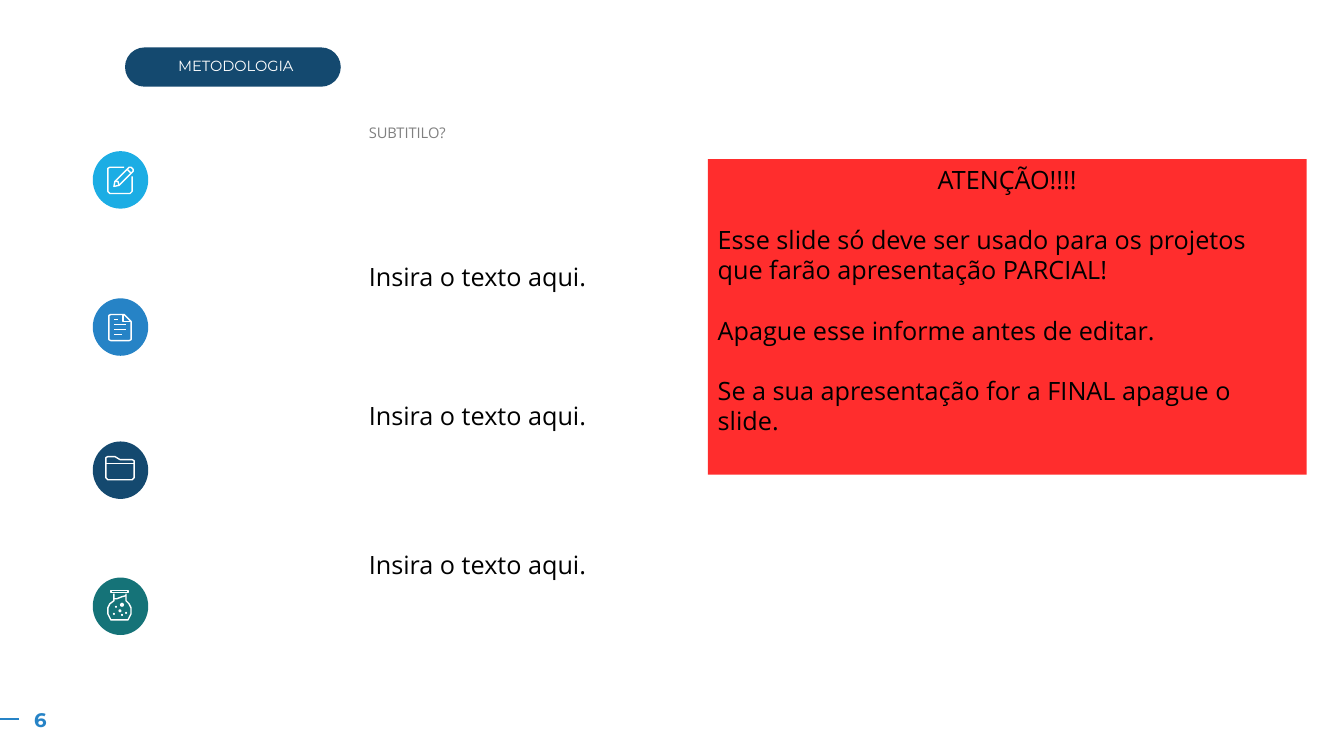
from pptx import Presentation
from pptx.dml.color import RGBColor
from pptx.enum.shapes import MSO_CONNECTOR, MSO_SHAPE
from pptx.enum.text import MSO_ANCHOR, PP_ALIGN
from pptx.util import Inches, Pt
from lxml import etree


def paint(target, color):
    target.solid()
    target.fore_color.rgb = RGBColor.from_string(color)


def write(paragraph, text, size, font, color, align=PP_ALIGN.LEFT, bold=False):
    paragraph.alignment = align
    run = paragraph.add_run()
    run.text = text
    run.font.size = Pt(size)
    run.font.name = font
    run.font.bold = bold
    paint(run.font.fill, color)


NAVY = "14496F"
BLUE = "2683C6"
WHITE = "FFFFFF"
BLACK = "000000"

presentation = Presentation()
presentation.slide_width = Inches(13.33)
presentation.slide_height = Inches(7.5)
slide = presentation.slides.add_slide(presentation.slide_layouts[5])
shapes = slide.shapes

heading_pill = shapes.add_shape(
    MSO_SHAPE.ROUNDED_RECTANGLE, Inches(1.24), Inches(0.47), Inches(2.14), Inches(0.39))
heading_pill.adjustments[0] = 0.5
heading_pill.shadow.inherit = False
paint(heading_pill.fill, NAVY)
heading_pill.line.fill.background()

heading = shapes.title
heading.left, heading.top = Inches(1.41), Inches(0.51)
heading.width, heading.height = Inches(1.86), Inches(0.29)
heading.text_frame.vertical_anchor = MSO_ANCHOR.TOP
write(heading.text_frame.paragraphs[0], "METODOLOGIA", 10.5, "Montserrat", WHITE, PP_ALIGN.CENTER)
heading.element.addprevious(heading_pill.element)

subtitle = shapes.add_textbox(Inches(3.56), Inches(1.09), Inches(7.7), Inches(0.34)).text_frame
subtitle.word_wrap = True
subtitle.paragraphs[0].line_spacing = 1.5
write(subtitle.paragraphs[0], "SUBTITILO?", 10.5, "Open Sans", "808080")

pencil_note = [
    [(1.23, 1.66), (1.09, 1.66), (1.07, 1.67), (1.07, 1.9), (1.09, 1.92),
     (1.29, 1.92), (1.31, 1.9), (1.31, 1.75)],
    [(1.13, 1.85), (1.14, 1.8), (1.28, 1.66), (1.3, 1.66), (1.32, 1.68),
     (1.32, 1.7), (1.18, 1.84), (1.13, 1.85)],
    [(1.26, 1.68), (1.3, 1.72)],
    [(1.14, 1.8), (1.17, 1.8), (1.18, 1.84)],
]
document = [
    [(1.23, 3.12), (1.1, 3.12), (1.08, 3.13), (1.08, 3.37), (1.1, 3.38),
     (1.28, 3.38), (1.3, 3.37), (1.3, 3.19), (1.23, 3.12)],
    [(1.22, 3.12), (1.22, 3.19), (1.3, 3.19)],
    [(1.13, 3.17), (1.17, 3.17)],
    [(1.13, 3.22), (1.25, 3.22)],
    [(1.13, 3.27), (1.25, 3.27)],
    [(1.13, 3.32), (1.21, 3.32)],
]
folder = [
    [(1.07, 4.53), (1.14, 4.53), (1.19, 4.56), (1.31, 4.56), (1.33, 4.57), (1.33, 4.74),
     (1.31, 4.76), (1.07, 4.76), (1.05, 4.74), (1.05, 4.54), (1.07, 4.53)],
    [(1.05, 4.6), (1.33, 4.6)],
]
flask = [
    [(1.1, 5.86), (1.27, 5.86), (1.27, 5.88), (1.1, 5.88), (1.1, 5.86)],
    [(1.13, 5.89), (1.13, 5.96), (1.09, 5.99), (1.07, 6.03), (1.07, 6.09), (1.1, 6.15),
     (1.27, 6.15), (1.3, 6.09), (1.3, 6.03), (1.28, 5.99), (1.25, 5.96), (1.25, 5.89)],
    [(1.13, 5.94), (1.16, 5.94), (1.21, 5.92), (1.25, 5.91)],
]
steps = [
    (1.5, "1CADE4", pencil_note),
    (2.96, BLUE, document),
    (4.38, NAVY, folder),
    (5.73, "157378", flask),
]
for top, color, strokes in steps:
    disc = shapes.add_shape(MSO_SHAPE.OVAL, Inches(0.92), Inches(top), Inches(0.55), Inches(0.57))
    disc.shadow.inherit = False
    paint(disc.fill, color)
    disc.line.fill.background()

    outlines = [[(Inches(x), Inches(y)) for x, y in stroke] for stroke in strokes]
    builder = shapes.build_freeform(*outlines[0][0])
    builder.add_line_segments(outlines[0][1:], close=False)
    for outline in outlines[1:]:
        builder.move_to(*outline[0])
        builder.add_line_segments(outline[1:], close=False)
    icon = builder.convert_to_shape()
    icon.shadow.inherit = False
    icon.fill.background()
    paint(icon.line.fill, WHITE)
    icon.line.width = Pt(1)

bubbles = [(1.21, 6, 0.04), (1.19, 6.06, 0.03), (1.13, 6.09, 0.02),
           (1.15, 6.02, 0.02), (1.25, 6.08, 0.02), (1.21, 6.1, 0.02)]
for center_x, center_y, size in bubbles:
    bubble = shapes.add_shape(
        MSO_SHAPE.OVAL, Inches(center_x - size / 2), Inches(center_y - size / 2),
        Inches(size), Inches(size))
    bubble.shadow.inherit = False
    paint(bubble.fill, WHITE)
    bubble.line.fill.background()

for top in (2.54, 3.92, 5.4):
    step_text = shapes.add_textbox(Inches(3.56), Inches(top), Inches(7.7), Inches(1.13)).text_frame
    step_text.word_wrap = True
    write(step_text.paragraphs[0], "Insira o texto aqui.", 18, "Open Sans", BLACK)

warning = shapes.add_shape(
    MSO_SHAPE.RECTANGLE, Inches(7.02), Inches(1.58), Inches(5.94), Inches(3.13))
warning.shadow.inherit = False
paint(warning.fill, "FF2D2D")
warning.line.fill.background()
warning_text = warning.text_frame
warning_text.word_wrap = True
warning_text.vertical_anchor = MSO_ANCHOR.TOP
write(warning_text.paragraphs[0], "ATENÇÃO!!!!", 18, "Open Sans", BLACK, PP_ALIGN.CENTER)
for notice in (
    "Esse slide só deve ser usado para os projetos que farão apresentação PARCIAL!",
    "Apague esse informe antes de editar.",
    "Se a sua apresentação for a FINAL apague o slide.",
):
    paragraph = warning_text.add_paragraph()
    paragraph.space_before = Pt(21.5)
    write(paragraph, notice, 18, "Open Sans", BLACK)

page_number = shapes.add_textbox(Inches(0.12), Inches(6.97), Inches(0.56), Inches(0.34)).text_frame
page_number.word_wrap = True
page_number.vertical_anchor = MSO_ANCHOR.MIDDLE
write(page_number.paragraphs[0], "6", 14, "Montserrat", BLUE, PP_ALIGN.CENTER, bold=True)

page_dash = shapes.add_connector(
    MSO_CONNECTOR.STRAIGHT, Inches(0.19), Inches(7.13), Inches(0), Inches(7.13))
paint(page_dash.line.fill, BLUE)
page_dash.line.width = Pt(1.5)
etree.SubElement(
    page_dash.element.spPr, "{http://schemas.openxmlformats.org/drawingml/2006/main}effectLst")

presentation.save("out.pptx")
